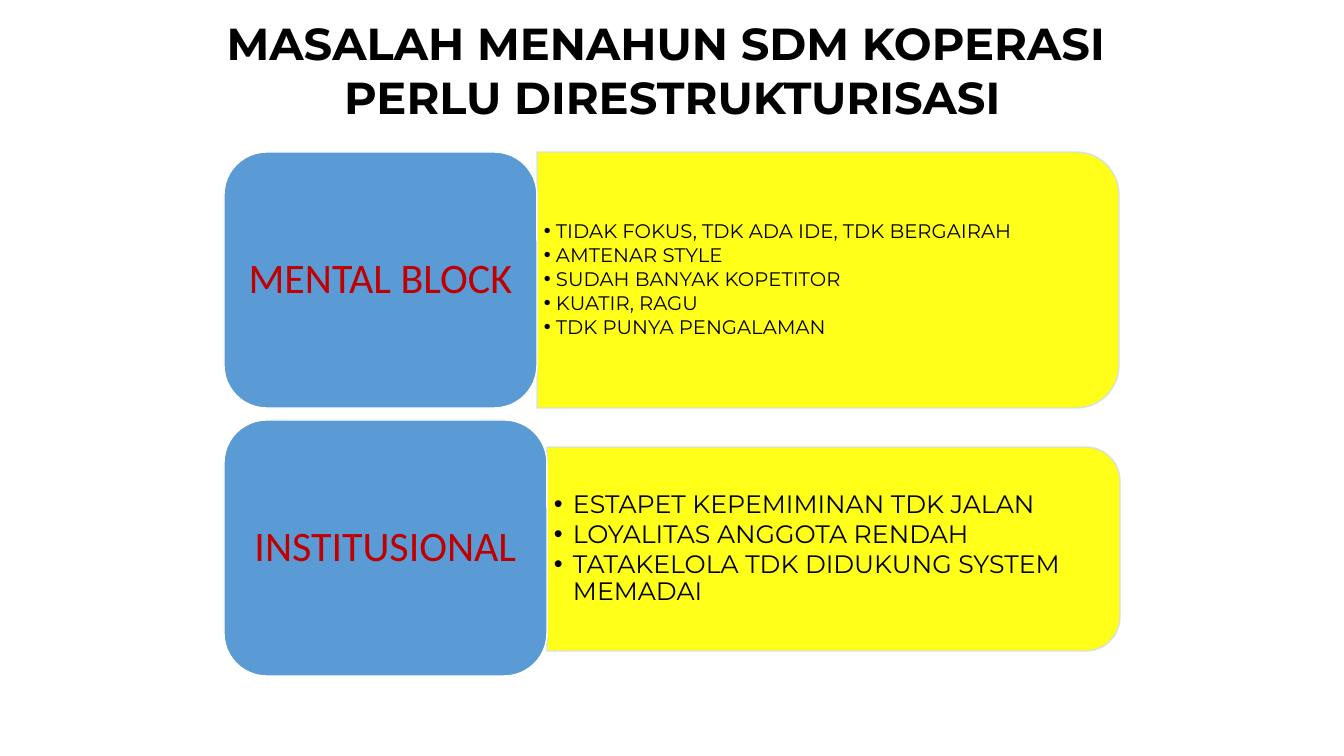
import lxml.etree
import pptx
import pptx.dml.color
import pptx.enum.shapes
import pptx.enum.text
import pptx.oxml.ns
import pptx.util

PX = 914400 / 100.8
COLORS = {
    "label": "5B9BD5",
    "label_line": "FFFFFF",
    "label_text": "C00000",
    "panel": "FFFF00",
    "panel_line": "D2DEEF",
    "text": "000000",
}
SHAPES = pptx.enum.shapes.MSO_SHAPE
ALIGN = pptx.enum.text.PP_ALIGN
MIDDLE = pptx.enum.text.MSO_ANCHOR.MIDDLE

TITLE = ["MASALAH MENAHUN SDM KOPERASI ", "PERLU DIRESTRUKTURISASI"]
ROWS = [
    {
        "label": "MENTAL BLOCK",
        "label_box": (224, 152, 313, 256),
        "panel_box": (537, 152, 582, 256),
        "size": 14,
        "indent": 12,
        "items": [
            "TIDAK FOKUS, TDK ADA IDE, TDK BERGAIRAH",
            "AMTENAR STYLE",
            "SUDAH BANYAK KOPETITOR",
            "KUATIR, RAGU",
            "TDK PUNYA PENGALAMAN",
        ],
    },
    {
        "label": "INSTITUSIONAL",
        "label_box": (224, 420, 323, 256),
        "panel_box": (547, 447, 573, 204),
        "size": 18,
        "indent": 19,
        "items": [
            "ESTAPET KEPEMIMINAN TDK JALAN",
            "LOYALITAS ANGGOTA RENDAH",
            "TATAKELOLA TDK DIDUKUNG SYSTEM MEMADAI",
        ],
    },
]


def px(length):
    return pptx.util.Emu(round(length * PX))


def rgb(name):
    return pptx.dml.color.RGBColor.from_string(COLORS[name])


def set_values(target, values):
    for name, value in values.items():
        setattr(target, name, value)


def add_element(parent, tag, **attributes):
    return lxml.etree.SubElement(parent, pptx.oxml.ns.qn(tag), attributes)


def add_filled_shape(slide, kind, box, fill, line):
    shape = slide.shapes.add_shape(kind, *map(px, box))
    shape.shadow.inherit = False
    shape.fill.solid()
    shape.fill.fore_color.rgb = rgb(fill)
    shape.line.color.rgb = rgb(line)
    shape.line.width = pptx.util.Pt(1)
    return shape


def write_lines(frame, lines, paragraph_format, font_format, color):
    """Write one paragraph per line and return the paragraphs."""
    for index, line in enumerate(lines):
        paragraph = frame.paragraphs[0] if index == 0 else frame.add_paragraph()
        set_values(paragraph, paragraph_format)
        run = paragraph.add_run()
        run.text = line
        set_values(run.font, font_format)
        run.font.color.rgb = rgb(color)
    return frame.paragraphs


def add_title(slide, box):
    frame = slide.shapes.add_textbox(*map(px, box)).text_frame
    frame.word_wrap = False
    font_format = {"name": "Montserrat", "size": pptx.util.Pt(32), "bold": True}
    write_lines(frame, TITLE, {"alignment": ALIGN.CENTER}, font_format, "text")


def add_label(slide, box, text):
    shape = add_filled_shape(slide, SHAPES.ROUNDED_RECTANGLE, box, "label", "label_line")
    set_values(shape.text_frame, {
        "word_wrap": True, "vertical_anchor": MIDDLE,
        "margin_left": px(12), "margin_right": px(12),
        "margin_top": px(6), "margin_bottom": px(6),
    })
    paragraph_format = {"alignment": ALIGN.CENTER, "line_spacing": 0.9}
    font_format = {"name": "Calibri", "size": pptx.util.Pt(30)}
    write_lines(shape.text_frame, [text], paragraph_format, font_format, "label_text")


def add_panel(slide, box):
    """Add a panel rounded on the right: a top-rounded shape turned a quarter."""
    left, top, width, height = box
    shift = (width - height) / 2
    turned_box = (left + shift, top - shift, height, width)
    shape = add_filled_shape(slide, SHAPES.ROUND_2_SAME_RECTANGLE, turned_box, "panel", "panel_line")
    shape.rotation = 90
    for color in shape._element.spPr.iter(pptx.oxml.ns.qn("a:srgbClr")):
        add_element(color, "a:alpha", val="90000")


def add_bullets(slide, box, items, size, indent):
    left, top, width, height = box
    corner = height * 0.05
    text_box = (left, top + corner, width - corner, height - 2 * corner)
    frame = slide.shapes.add_textbox(*map(px, text_box)).text_frame
    set_values(frame, {
        "word_wrap": True, "vertical_anchor": MIDDLE,
        "margin_left": px(7), "margin_right": px(7),
        "margin_top": px(4), "margin_bottom": px(4),
    })
    paragraph_format = {"level": 1, "line_spacing": 0.9, "space_after": pptx.util.Pt(2)}
    font_format = {"name": "Montserrat", "size": pptx.util.Pt(size)}
    for paragraph in write_lines(frame, items, paragraph_format, font_format, "text"):
        properties = paragraph._p.get_or_add_pPr()
        properties.set("marL", str(px(indent)))
        properties.set("indent", str(-px(indent)))
        add_element(properties, "a:buFont", typeface="Arial")
        add_element(properties, "a:buChar", char="•")


def add_row(slide, row):
    add_panel(slide, row["panel_box"])
    add_bullets(slide, row["panel_box"], row["items"], row["size"], row["indent"])
    add_label(slide, row["label_box"], row["label"])


def main():
    presentation = pptx.Presentation()
    presentation.slide_width = px(1344)
    presentation.slide_height = px(756)
    slide = presentation.slides.add_slide(presentation.slide_layouts[6])
    for row in ROWS:
        add_row(slide, row)
    add_title(slide, (192, 11, 961, 119))
    presentation.save("out.pptx")


if __name__ == "__main__":
    main()
